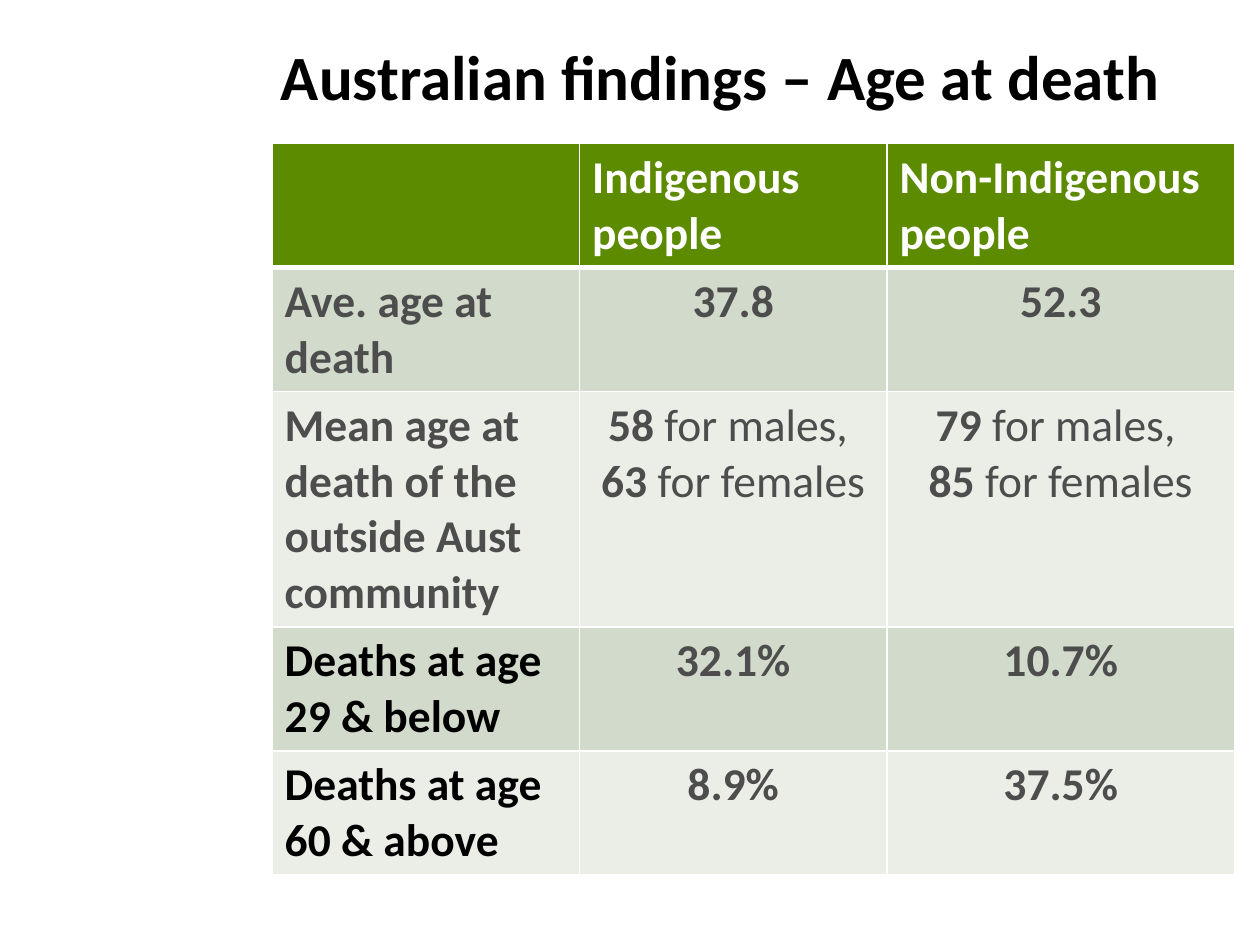
from lxml import etree
from pptx import Presentation
from pptx.dml.color import RGBColor
from pptx.enum.text import MSO_ANCHOR, PP_ALIGN
from pptx.oxml.ns import qn
from pptx.util import Inches, Pt

LEFT, CENTER = PP_ALIGN.LEFT, PP_ALIGN.CENTER
MIDDLE = MSO_ANCHOR.MIDDLE
BLACK, WHITE, GRAY = "000000", "FFFFFF", "4D4D4D"
GREEN, SAGE, PALE = "5D8B00", "D2DACC", "EAEEE7"


def add_run(paragraph, text, size, color, bold=True):
    run = paragraph.add_run()
    run.text = text
    run.font.name = "Calibri"
    run.font.size = Pt(size)
    run.font.bold = bold
    run.font.color.rgb = RGBColor.from_string(color)


def set_borders(cell, bottom_width):
    properties = cell._tc.get_or_add_tcPr()
    for position, side in enumerate("LRTB"):
        width = bottom_width if side == "B" else 1
        line = etree.Element(qn(f"a:ln{side}"), w=str(Pt(width)))
        fill = etree.SubElement(line, qn("a:solidFill"))
        etree.SubElement(fill, qn("a:srgbClr"), val=WHITE)
        properties.insert(position, line)


prs = Presentation()
prs.slide_width, prs.slide_height = Inches(10), Inches(7.5)
slide = prs.slides.add_slide(prs.slide_layouts[5])

title = slide.shapes.title
title.left, title.top = Inches(2.13), Inches(0.21)
title.width, title.height = Inches(7.58), Inches(0.78)
title.text_frame.vertical_anchor = MIDDLE
heading = title.text_frame.paragraphs[0]
heading.alignment = LEFT
add_run(heading, "Australian findings – Age at death", 36, BLACK)

# Each cell is a list of paragraphs; each paragraph is a bold part and a regular part.
findings = [
    ([], [("Indigenous people", "")], [("Non-Indigenous people", "")]),
    ([("Ave. age at death", "")], [("37.8", "")], [("52.3", "")]),
    ([("Mean age at death of the outside Aust community", "")],
     [("58", " for males, "), ("63", " for females")],
     [("79", " for males, "), ("85", " for females")]),
    ([("Deaths at age 29 & below", "")], [("32.1%", "")], [("10.7%", "")]),
    ([("Deaths at age 60 & above", "")], [("8.9%", "")], [("37.5%", "")]),
]
column_widths = [2.44, 2.44, 2.76]
row_heights = [0.98, 0.98, 1.87, 0.98, 0.98]
row_fills = [GREEN, SAGE, PALE, SAGE, PALE]
label_colors = [WHITE, GRAY, GRAY, BLACK, BLACK]

table = slide.shapes.add_table(
    len(findings), len(column_widths), Inches(2.16), Inches(1.14),
    Inches(sum(column_widths)), Inches(sum(row_heights))).table
for column, width in zip(table.columns, column_widths):
    column.width = Inches(width)
for row, height in zip(table.rows, row_heights):
    row.height = Inches(height)

for r, row_content in enumerate(findings):
    for c, paragraphs in enumerate(row_content):
        cell = table.cell(r, c)
        cell.fill.solid()
        cell.fill.fore_color.rgb = RGBColor.from_string(row_fills[r])
        set_borders(cell, 3 if r == 0 else 1)
        if r == 0:
            color = WHITE
        else:
            color = label_colors[r] if c == 0 else GRAY
        for p, (strong, regular) in enumerate(paragraphs):
            frame = cell.text_frame
            paragraph = frame.add_paragraph() if p else frame.paragraphs[0]
            paragraph.alignment = LEFT if r == 0 or c == 0 else CENTER
            add_run(paragraph, strong, 26, color)
            if regular:
                add_run(paragraph, regular, 26, color, bold=False)

prs.save("out.pptx")
